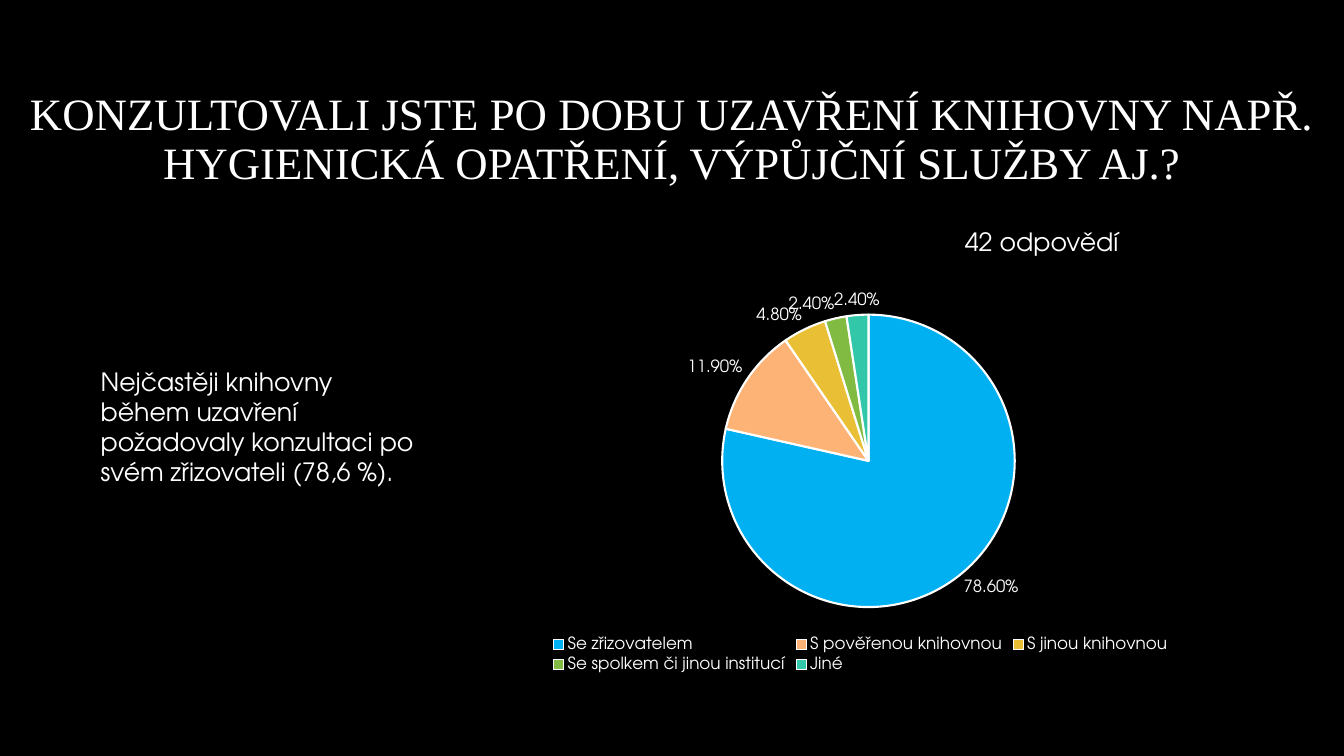
from pptx import Presentation
from pptx.chart.data import CategoryChartData
from pptx.dml.color import RGBColor
from pptx.enum.chart import XL_CHART_TYPE, XL_LABEL_POSITION, XL_LEGEND_POSITION
from pptx.enum.text import MSO_ANCHOR, PP_ALIGN
from pptx.util import Emu, Pt

PIE = XL_CHART_TYPE.PIE
OUTSIDE_END = XL_LABEL_POSITION.OUTSIDE_END
LEGEND_BOTTOM = XL_LEGEND_POSITION.BOTTOM
TOP, MIDDLE = MSO_ANCHOR.TOP, MSO_ANCHOR.MIDDLE
LEFT, CENTER = PP_ALIGN.LEFT, PP_ALIGN.CENTER

BLACK = RGBColor(0x00, 0x00, 0x00)
WHITE = RGBColor(0xFF, 0xFF, 0xFF)
BLUE = RGBColor(0x00, 0xB0, 0xF0)
ORANGE = RGBColor(0xFE, 0xB3, 0x76)
YELLOW = RGBColor(0xE9, 0xBF, 0x35)
GREEN = RGBColor(0x81, 0xBB, 0x42)
TEAL = RGBColor(0x32, 0xC7, 0xA9)

BODY_FONT = "TeX Gyre Adventor"
TITLE_FONT = "Times New Roman"
PX_PER_INCH = 100

ANSWERS = [
    ("Se zřizovatelem", 0.786, BLUE),
    ("S pověřenou knihovnou", 0.119, ORANGE),
    ("S jinou knihovnou", 0.048, YELLOW),
    ("Se spolkem či jinou institucí", 0.024, GREEN),
    ("Jiné", 0.024, TEAL),
]


def px(length):
    return Emu(length * 914400 // PX_PER_INCH)


def style_font(font, size, name=BODY_FONT):
    font.size = Pt(size)
    font.name = name
    font.color.rgb = WHITE


def add_text(page, area, text, size=18, name=BODY_FONT, align=LEFT, anchor=TOP, spacing=None):
    box = page.shapes.add_textbox(*map(px, area))
    frame = box.text_frame
    frame.word_wrap = True
    frame.vertical_anchor = anchor
    para = frame.paragraphs[0]
    para.alignment = align
    para.line_spacing = spacing
    span = para.add_run()
    span.text = text
    style_font(span.font, size, name)


def add_answer_pie(page, area):
    data = CategoryChartData(number_format="0.00%")
    data.categories = [answer for answer, share, color in ANSWERS]
    data.add_series("Series 1", [share for answer, share, color in ANSWERS])
    chart = page.shapes.add_chart(PIE, *map(px, area), data).chart
    chart.has_title = False
    style_font(chart.font, 10)

    chart.has_legend = True
    chart.legend.position = LEGEND_BOTTOM
    chart.legend.include_in_layout = False
    style_font(chart.legend.font, 12)

    plot = chart.plots[0]
    plot.vary_by_categories = True
    series = plot.series[0]
    for index, (answer, share, color) in enumerate(ANSWERS):
        slice_format = series.points[index].format
        slice_format.fill.solid()
        slice_format.fill.fore_color.rgb = color
        slice_format.line.color.rgb = WHITE
        slice_format.line.width = Pt(1.5)

    labels = series.data_labels
    labels.show_value = True
    labels.show_percentage = False
    labels.number_format = "0.00%"
    labels.number_format_is_linked = False
    labels.position = OUTSIDE_END
    style_font(labels.font, 12)


def build_survey_page(deck):
    page = deck.slides.add_slide(deck.slide_layouts[6])
    page.background.fill.solid()
    page.background.fill.fore_color.rgb = BLACK
    add_text(
        page,
        (19, 77, 1295, 125),
        "KONZULTOVALI JSTE PO DOBU UZAVŘENÍ KNIHOVNY NAPŘ. "
        "HYGIENICKÁ OPATŘENÍ, VÝPŮJČNÍ SLUŽBY AJ.?",
        size=32,
        name=TITLE_FONT,
        align=CENTER,
        anchor=MIDDLE,
        spacing=0.9,
    )
    add_answer_pie(page, (393, 277, 921, 394))
    add_text(page, (947, 220, 205, 40), "42 odpovědí")
    add_text(
        page,
        (90, 358, 341, 131),
        "Nejčastěji knihovny během uzavření požadovaly konzultaci po svém zřizovateli (78,6 %).",
    )


def main():
    deck = Presentation()
    deck.slide_width = px(1333)
    deck.slide_height = px(750)
    build_survey_page(deck)
    deck.save("out.pptx")


if __name__ == "__main__":
    main()
